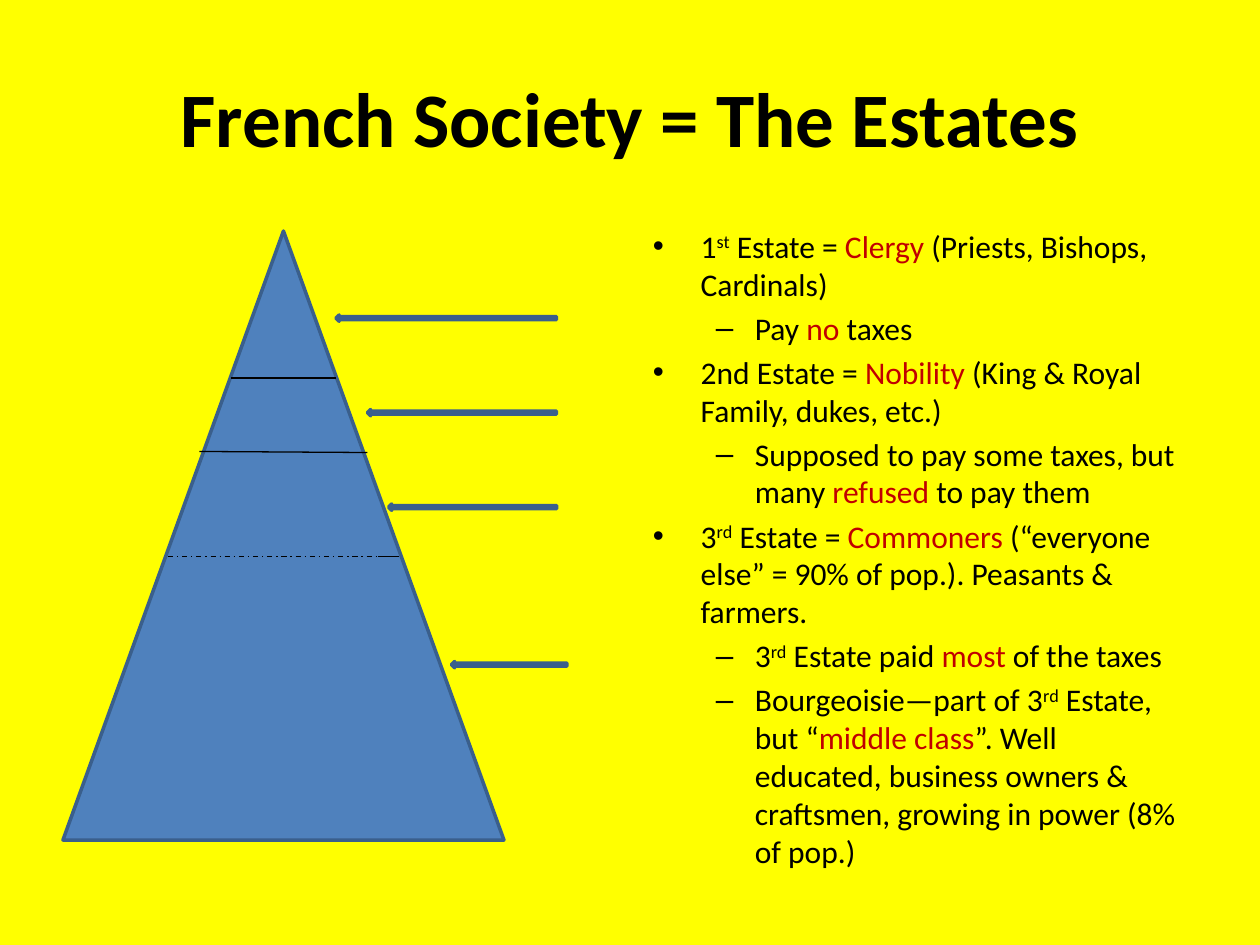
import pptx
import pptx.dml.color
import pptx.enum.dml
import pptx.enum.shapes
import pptx.enum.text
import pptx.util
from lxml import etree
from pptx.oxml.ns import qn

# Grid of 120 columns by 90 rows, twelve cells to the inch
CELL = pptx.util.Inches(1) // 12
COLUMNS, ROWS = 120, 90
FONT = "Calibri"
BLACK, RED, YELLOW = "000000", "C00000", "FFFF00"
BLUE, DARK_BLUE = "4F81BD", "3A5F8C"

# Level and wording: *red words*, ^superscript^
ESTATES = [
    (0, "1^st^ Estate = *Clergy* (Priests, Bishops, Cardinals)"),
    (1, "Pay *no* taxes"),
    (0, "2nd Estate = *Nobility* (King & Royal Family, dukes, etc.)"),
    (1, "Supposed to pay some taxes, but many *refused* to pay them"),
    (0, "3^rd^ Estate = *Commoners* (“everyone else” = 90% of pop.). "
        "Peasants & farmers."),
    (1, "3^rd^ Estate paid *most* of the taxes"),
    (1, "Bourgeoisie—part of 3^rd^ Estate, but “*middle class*”. Well educated, "
        "business owners & craftsmen, growing in power (8% of pop.)"),
]
# Bullet, left margin and hanging indent in inches, per level
LEVELS = [("•", 0.38, -0.38), ("–", 0.81, -0.31)]

# Left column, left row, right column, right row, dash
DASH_DOT = pptx.enum.dml.MSO_LINE.DASH_DOT
DIVIDERS = [
    (22, 36, 32, 36, None),
    (19, 43, 35, 43.1, None),
    (16, 53, 37, 53, DASH_DOT),
    (36, 53, 38, 53, None),
]
# Left column, row, width in columns
POINTERS = [(32, 30, 21), (35, 39, 18), (37, 48, 16), (43, 63, 11)]


def grid(*cells):
    return [round(cell * CELL) for cell in cells]


def colour(hex_code):
    return pptx.dml.color.RGBColor.from_string(hex_code)


def style_run(run, size, hex_code, bold=False, raised=False):
    run.font.name = FONT
    run.font.size = pptx.util.Pt(size)
    run.font.bold = bold
    run.font.color.rgb = colour(hex_code)
    if raised:
        run._r.get_or_add_rPr().set("baseline", "30000")


def add_text_frame(slide, *box):
    frame = slide.shapes.add_textbox(*grid(*box)).text_frame
    frame.word_wrap = True
    return frame


def add_title(slide, wording):
    frame = add_text_frame(slide, 6, 3.6, 108, 15)
    frame.vertical_anchor = pptx.enum.text.MSO_ANCHOR.MIDDLE
    heading = frame.paragraphs[0]
    heading.text = wording
    heading.alignment = pptx.enum.text.PP_ALIGN.CENTER
    style_run(heading.runs[0], 44, BLACK, bold=True)


def set_bullet(paragraph, level):
    mark, margin, indent = LEVELS[level]
    paragraph.level = level
    properties = paragraph._p.get_or_add_pPr()
    properties.set("marL", str(pptx.util.Inches(margin)))
    properties.set("indent", str(pptx.util.Inches(indent)))
    etree.SubElement(properties, qn("a:buFont")).set("typeface", "Arial")
    etree.SubElement(properties, qn("a:buChar")).set("char", mark)


def add_marked_runs(paragraph, wording):
    for i, part in enumerate(wording.split("*")):
        for j, piece in enumerate(part.split("^")):
            if piece:
                run = paragraph.add_run()
                run.text = piece
                style_run(run, 18, RED if i % 2 else BLACK, raised=j % 2 == 1)


def add_estate_list(slide):
    frame = add_text_frame(slide, 61, 21, 53, 59.4)
    for number, (level, wording) in enumerate(ESTATES):
        point = frame.add_paragraph() if number else frame.paragraphs[0]
        point.space_before = pptx.util.Pt(3.6)
        set_bullet(point, level)
        add_marked_runs(point, wording)


def add_blue_shape(slide, kind, *box):
    shape = slide.shapes.add_shape(kind, *grid(*box))
    shape.shadow.inherit = False
    shape.fill.solid()
    shape.fill.fore_color.rgb = colour(BLUE)
    shape.line.color.rgb = colour(DARK_BLUE)
    shape.line.width = pptx.util.Pt(2)


def add_divider(slide, left, left_row, right, right_row, dash):
    divider = slide.shapes.add_connector(
        pptx.enum.shapes.MSO_CONNECTOR.STRAIGHT,
        *grid(left, left_row, right, right_row))
    divider.line.color.rgb = colour(BLACK)
    divider.line.width = pptx.util.Pt(0.75)
    if dash:
        divider.line.dash_style = dash
    etree.SubElement(divider._element.spPr, qn("a:effectLst"))


def main():
    deck = pptx.Presentation()
    deck.slide_width, deck.slide_height = grid(COLUMNS, ROWS)
    slide = deck.slides.add_slide(deck.slide_layouts[6])
    slide.background.fill.solid()
    slide.background.fill.fore_color.rgb = colour(YELLOW)

    # Wording
    add_title(slide, "French Society = The Estates")
    add_estate_list(slide)

    # Pyramid of the estates
    shapes = pptx.enum.shapes.MSO_SHAPE
    add_blue_shape(slide, shapes.ISOSCELES_TRIANGLE, 6, 22, 42, 58)
    for divider in DIVIDERS:
        add_divider(slide, *divider)

    # Arrows pointing at each layer
    for left, row, width in POINTERS:
        add_blue_shape(slide, shapes.LEFT_ARROW, left, row, width, 0.6)

    deck.save("out.pptx")


if __name__ == "__main__":
    main()
